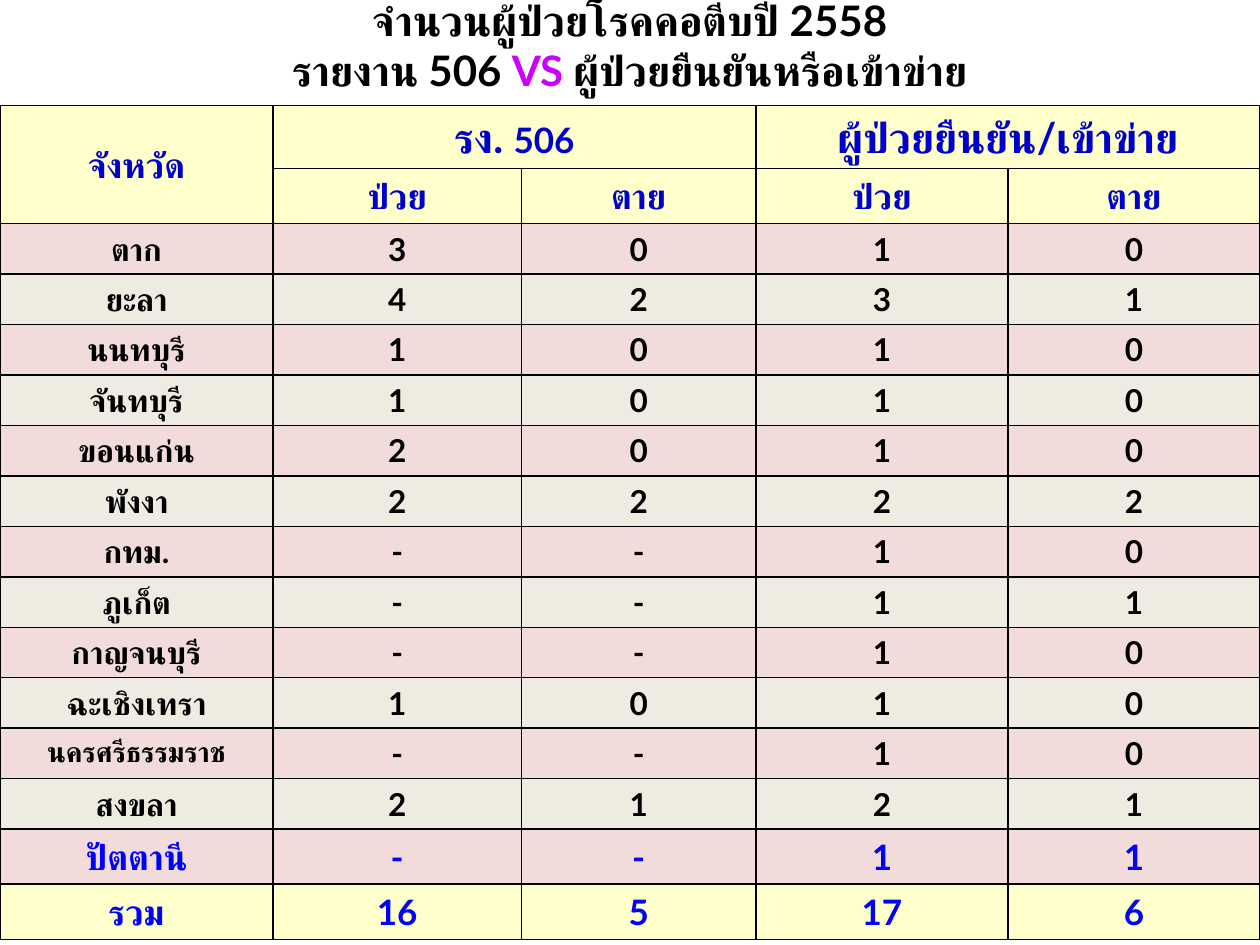
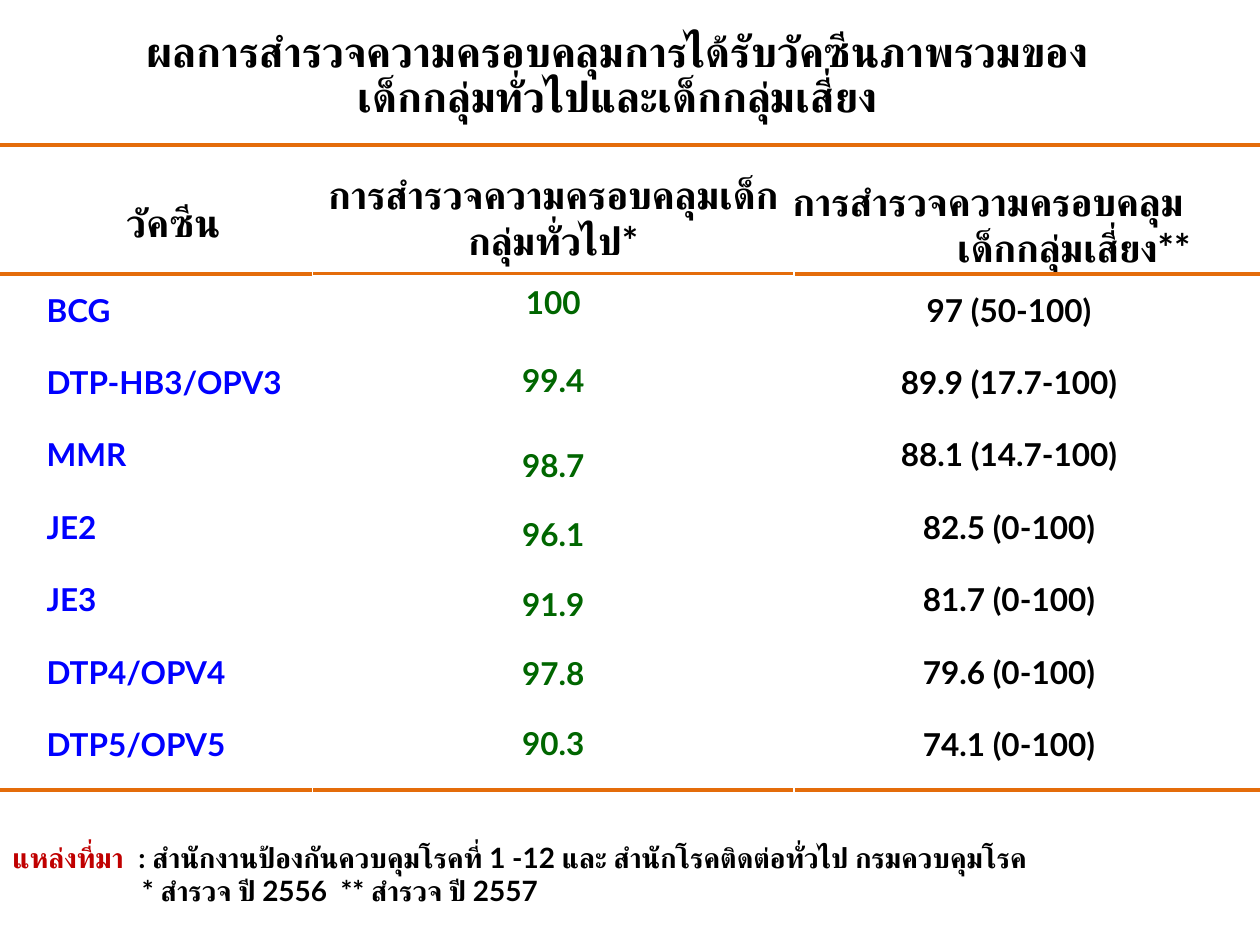
from lxml import etree
from pptx import Presentation
from pptx.dml.color import RGBColor
from pptx.enum.shapes import MSO_CONNECTOR
from pptx.enum.text import MSO_ANCHOR, PP_ALIGN
from pptx.oxml.ns import qn
from pptx.util import Pt

BLACK = RGBColor(0, 0, 0)
WHITE = RGBColor(255, 255, 255)
NAVY = RGBColor(0, 0, 0xCC)
BLUE = RGBColor(0, 0, 0xFF)
GREEN = RGBColor(0, 0x66, 0)
RED = RGBColor(0xC0, 0, 0)
PURPLE = RGBColor(0xCC, 0, 0xFF)
ORANGE = RGBColor(0xE4, 0x6C, 0x0A)
CREAM = RGBColor(0xFF, 0xFF, 0xCC)
PINK = RGBColor(0xF2, 0xDC, 0xDB)
STONE = RGBColor(0xEE, 0xEC, 0xE1)

LEFT, CENTER = PP_ALIGN.LEFT, PP_ALIGN.CENTER
TOP, MIDDLE = MSO_ANCHOR.TOP, MSO_ANCHOR.MIDDLE
STRAIGHT = MSO_CONNECTOR.STRAIGHT
FONT = "Lato"
WIDTH, HEIGHT = 720, 540

CASES = [
    ("ตาก", "3", "0", "1", "0"),
    ("ยะลา", "4", "2", "3", "1"),
    ("นนทบุรี", "1", "0", "1", "0"),
    ("จันทบุรี", "1", "0", "1", "0"),
    ("ขอนแก่น", "2", "0", "1", "0"),
    ("พังงา", "2", "2", "2", "2"),
    ("กทม.", "-", "-", "1", "0"),
    ("ภูเก็ต", "-", "-", "1", "1"),
    ("กาญจนบุรี", "-", "-", "1", "0"),
    ("ฉะเชิงเทรา", "1", "0", "1", "0"),
    ("นครศรีธรรมราช", "-", "-", "1", "0"),
    ("สงขลา", "2", "1", "2", "1"),
    ("ปัตตานี", "-", "-", "1", "1"),
    ("รวม", "16", "5", "17", "6"),
]

COVERAGE = [
    ("BCG", "100", "97 (50-100)"),
    ("DTP-HB3/OPV3", "99.4", "89.9 (17.7-100)"),
    ("MMR", "98.7", "88.1 (14.7-100)"),
    ("JE2", "96.1", "82.5 (0-100)"),
    ("JE3", "91.9", "81.7 (0-100)"),
    ("DTP4/OPV4", "97.8", "79.6 (0-100)"),
    ("DTP5/OPV5", "90.3", "74.1 (0-100)"),
]


class Deck:
    def __init__(self):
        self.prs = Presentation()
        self.prs.slide_width, self.prs.slide_height = Pt(WIDTH), Pt(HEIGHT)
        self.s = None

    def slide(self):
        self.s = self.prs.slides.add_slide(self.prs.slide_layouts[6])

    def add_runs(self, p, runs, align=CENTER, spacing=None):
        p.alignment = align
        if spacing:
            p.line_spacing = spacing
        for text, size, color in runs:
            for i, part in enumerate(text.split("\n")):
                if i:
                    p.add_line_break()
                r = p.add_run()
                r.text = part
                r.font.name, r.font.size, r.font.bold = FONT, Pt(size), True
                r.font.color.rgb = color
                etree.SubElement(r._r.get_or_add_rPr(), qn("a:cs"), typeface=FONT)

    def indent(self, p, left=0, right=0, first=0):
        pPr = p._p.get_or_add_pPr()
        for name, value in (("marL", left), ("marR", right), ("indent", first)):
            pPr.set(name, str(Pt(value)))

    def textbox(self, x, y, w, h, anchor=TOP):
        tf = self.s.shapes.add_textbox(Pt(x), Pt(y), Pt(w), Pt(h)).text_frame
        tf.word_wrap = True
        tf.vertical_anchor = anchor
        return tf

    def title(self, x, y, w, runs, spacing=None):
        tf = self.textbox(x, y, w, 90, MIDDLE)
        self.add_runs(tf.paragraphs[0], runs, spacing=spacing)

    def rule(self, y):
        c = self.s.shapes.add_connector(STRAIGHT, 0, Pt(y), Pt(WIDTH), Pt(y))
        c.line.color.rgb = ORANGE
        c.line.width = Pt(2.25)
        etree.SubElement(c._element.spPr, qn("a:effectLst"))

    def border(self, cell, color, bottom):
        tcPr = cell._tc.get_or_add_tcPr()
        for side, width in (("L", 1), ("R", 1), ("T", 1), ("B", bottom)):
            ln = etree.SubElement(tcPr, qn(f"a:ln{side}"), w=str(Pt(width)))
            fill = etree.SubElement(ln, qn("a:solidFill"))
            etree.SubElement(fill, qn("a:srgbClr"), val=str(color))

    def table(self, x, y, cols, rows, line, head_line=1):
        frame = self.s.shapes.add_table(
            len(rows), len(cols), Pt(x), Pt(y), Pt(sum(cols)), Pt(sum(rows)))
        t = frame.table
        t.first_row = t.horz_banding = False
        for col, w in zip(t.columns, cols):
            col.width = Pt(w)
        for i, (row, h) in enumerate(zip(t.rows, rows)):
            row.height = Pt(h)
            for cell in row.cells:
                self.border(cell, line, 1 if i else head_line)
                cell.fill.background()
        return t

    def cell(self, cell, runs, align=CENTER, fill=None, anchor=TOP, spacing=None):
        if fill is not None:
            cell.fill.solid()
            cell.fill.fore_color.rgb = fill
        cell.vertical_anchor = anchor
        self.add_runs(cell.text_frame.paragraphs[0], runs, align, spacing)


def cases_slide(deck):
    deck.slide()
    deck.title(0, -19.5, WIDTH, [
        ("จำนวนผู้ป่วยโรคคอตีบปี 2558\nรายงาน 506 ", 24, BLACK),
        ("VS ", 24, PURPLE),
        ("ผู้ป่วยยืนยันหรือเข้าข่าย", 24, BLACK)])

    heights = [36, 31.5] + [28.8] * 12 + [31.5] * 2
    t = deck.table(0, 60.3, [156, 142, 134, 144, 144], heights, BLACK)
    t.cell(0, 0).merge(t.cell(1, 0))
    t.cell(0, 1).merge(t.cell(0, 2))
    t.cell(0, 3).merge(t.cell(0, 4))
    deck.cell(t.cell(0, 0), [("จังหวัด", 20, NAVY)], fill=CREAM, anchor=MIDDLE)
    deck.cell(t.cell(0, 1), [("รง. ", 24, NAVY), ("506", 20, NAVY)], fill=CREAM)
    deck.cell(t.cell(0, 3), [("ผู้ป่วยยืนยัน/เข้าข่าย", 24, NAVY)], fill=CREAM)
    for j, text in enumerate(("ป่วย", "ตาย") * 2, 1):
        deck.cell(t.cell(1, j), [(text, 20, NAVY)], fill=CREAM)

    total = len(CASES) - 1
    for i, record in enumerate(CASES):
        fill = CREAM if i == total else (PINK, STONE)[i % 2]
        size, color = (20, BLUE) if i >= total - 1 else (18, BLACK)
        for j, text in enumerate(record):
            shown = 16 if text == "นครศรีธรรมราช" else size
            deck.cell(t.cell(i + 2, j), [(text, shown, color)], fill=fill)


def coverage_slide(deck):
    deck.slide()
    deck.title(-11.5, -1.4, 728.6, [
        ("ผลการสำรวจความครอบคลุมการได้รับวัคซีนภาพรวมของ\n"
         "เด็กกลุ่มทั่วไปและเด็กกลุ่มเสี่ยง", 24, BLACK)], 0.9)

    heights = [68.4] + [41.4] * 7 + [68.4]
    t = deck.table(19.4, 94.3, [172, 247.7, 275], heights, WHITE, 3)
    vaccine, risk = t.cell(0, 0), t.cell(0, 2)
    deck.cell(vaccine, [("วัคซีน", 22, BLACK)], anchor=MIDDLE, spacing=0.9)
    vaccine.margin_right = Pt(20)
    deck.cell(risk, [("การสำรวจความครอบคลุม", 22, BLACK)], anchor=MIDDLE)
    deck.indent(risk.text_frame.paragraphs[0], right=24)
    p = risk.text_frame.add_paragraph()
    deck.add_runs(p, [("เด็กกลุ่มเสี่ยง**", 22, BLACK)])
    deck.indent(p, left=74)
    for i, (name, _, rate) in enumerate(COVERAGE, 1):
        deck.cell(t.cell(i, 0), [(name, 18, BLUE)], LEFT)
        deck.cell(t.cell(i, 2), [(rate, 18, BLACK)])

    deck.rule(156.7)
    deck.rule(82.8)

    tf = deck.textbox(0, 476.6, 705.6, 65.5)
    p = tf.paragraphs[0]
    deck.add_runs(p, [
        ("แหล่งที่มา\t", 16, RED),
        (": สำนักงานป้องกันควบคุมโรคที่ 1 -12 และ "
         "สำนักโรคติดต่อทั่วไป กรมควบคุมโรค", 16, BLACK)], LEFT)
    deck.indent(p, left=72, first=-72)
    p = tf.add_paragraph()
    deck.add_runs(p, [("* สำรวจ ปี 2556  ** สำรวจ ปี 2557", 16, BLACK)], LEFT)
    deck.indent(p, left=74)

    deck.rule(451.4)

    heights = [68.4, 39.7, 53.3] + [39.7] * 4 + [68.4]
    t = deck.table(178.6, 90, [275], heights, WHITE, 3)
    deck.cell(t.cell(0, 0), [("การสำรวจความครอบคลุมเด็กกลุ่มทั่วไป*", 22, BLACK)],
              anchor=MIDDLE)
    for i, (_, rate, _) in enumerate(COVERAGE, 1):
        deck.cell(t.cell(i, 0), [(rate, 18, GREEN)])
    t.cell(2, 0).margin_top = Pt(8.6)


def main():
    deck = Deck()
    cases_slide(deck)
    coverage_slide(deck)
    deck.prs.save("out.pptx")


if __name__ == "__main__":
    main()
